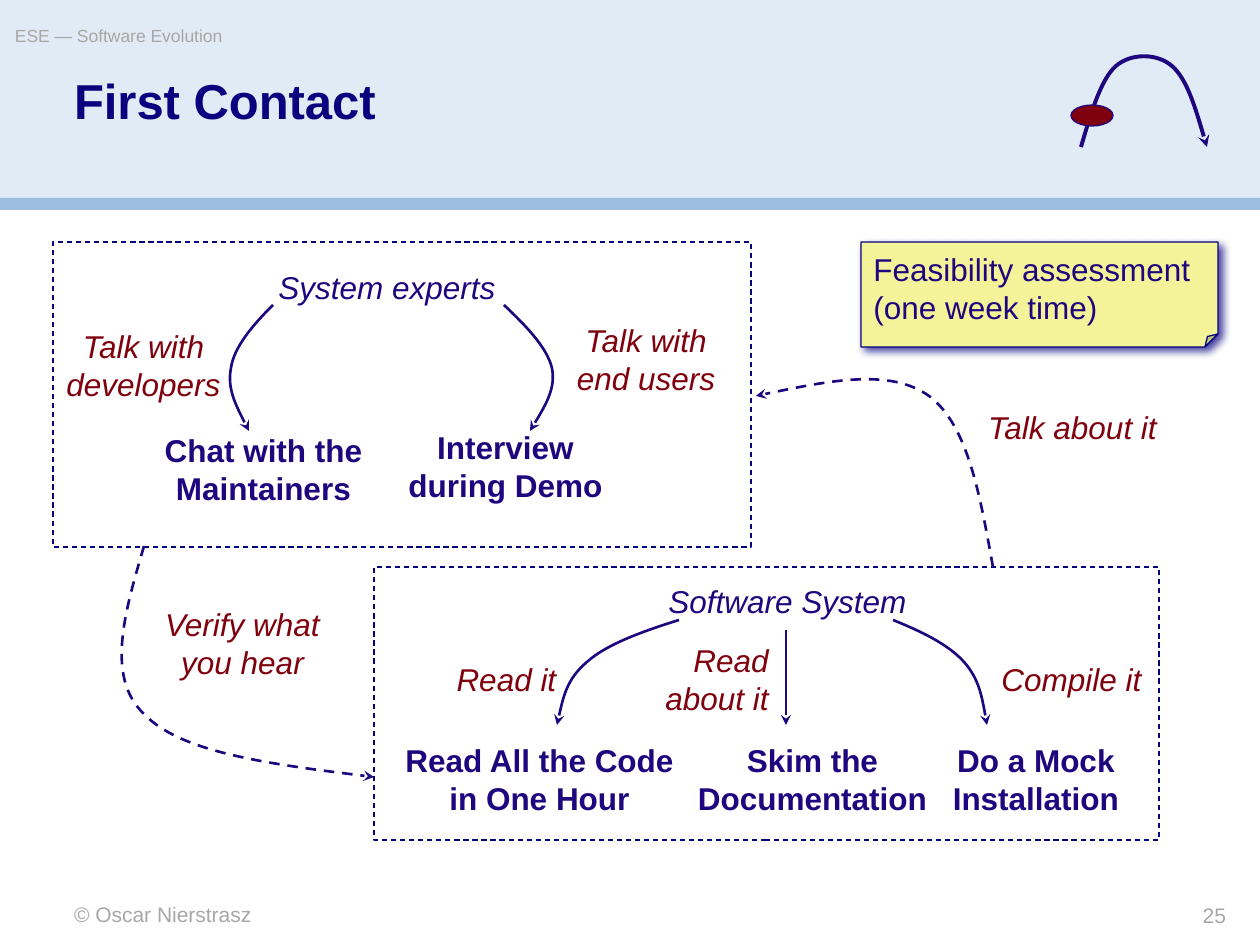
from lxml.etree import SubElement
from pptx import Presentation
from pptx.dml.color import RGBColor
from pptx.enum.dml import MSO_LINE
from pptx.enum.shapes import MSO_CONNECTOR, MSO_SHAPE
from pptx.enum.text import MSO_ANCHOR, MSO_AUTO_SIZE, PP_ALIGN
from pptx.oxml.ns import qn
from pptx.util import Pt

EMU_PER_PX = 914400 / 126
COLORS = {
    "header": "E1EBF5", "rule": "9CBDDE", "title": "0A017F", "frame": "05027D",
    "ink": "1E067F", "action": "7F010D", "note": "F5F399", "muted": "A7A7A7",
}

# text, box; a vertical tab breaks the line inside a paragraph
SOURCES = [
    ("System experts", (266, 262, 242, 50)),
    ("Software System", (656, 576, 263, 50)),
]
PATTERNS = [
    ("Chat with the\vMaintainers", (152, 425, 223, 88)),
    ("Interview\vduring Demo", (396, 422, 219, 88)),
    ("Read All the Code\nin One Hour", (392, 735, 295, 88)),
    ("Skim the\vDocumentation", (685, 735, 255, 88)),
    ("Do a Mock\vInstallation", (940, 735, 192, 88)),
]
ACTIONS = [
    ("Talk with\vdevelopers", (54, 321, 179, 88)),
    ("Talk with\nend users", (564, 315, 164, 88)),
    ("Read it", (444, 654, 125, 50)),
    ("Compile it", (989, 654, 165, 50)),
    ("Talk about it", (974, 402, 197, 50)),
    ("Verify what\vyou hear", (152, 599, 181, 88)),
]
# start point, then two control points and an end point per segment
BRANCHES = [
    [(504, 305), (525, 325), (547, 347), (552, 368), (556, 388), (543, 410), (530, 431)],
    [(273, 305), (253, 325), (234, 347), (231, 368), (227, 388), (238, 410), (249, 431)],
    [(679, 620), (644, 631), (607, 644), (587, 662), (567, 679), (562, 702), (557, 725)],
    [(893, 620), (920, 631), (948, 644), (964, 662), (979, 679), (983, 702), (987, 725)],
]
FEEDBACK = [
    [(144, 546), (125, 611), (105, 677), (144, 714), (181, 753), (277, 765), (374, 777)],
    [(993, 567), (980, 495), (968, 425), (929, 396), (890, 368), (823, 382), (756, 396)],
]
LIFECYCLE = [(1081, 147), (1091, 113), (1101, 79), (1116, 66), (1131, 53),
             (1157, 53), (1172, 66), (1187, 79), (1197, 113), (1207, 147)]


def px(value):
    return round(value * EMU_PER_PX)


def rgb(name):
    return RGBColor.from_string(COLORS[name])


def style_line(line, color, width, dashed=False, arrow=False):
    line.color.rgb = rgb(color)
    line.width = Pt(width)
    if dashed:
        line.dash_style = MSO_LINE.DASH
    if arrow:
        ln = line._get_or_add_ln()
        SubElement(ln, qn("a:tailEnd"), type="stealth")


def format_text(tf, color, size, align=PP_ALIGN.LEFT, bold=False, italic=False):
    for p in tf.paragraphs:
        p.alignment = align
        for r in p.runs:
            r.font.name = "Arial"
            r.font.size = Pt(size)
            r.font.bold = bold
            r.font.italic = italic
            r.font.color.rgb = rgb(color)


def clear_margins(tf):
    tf.margin_left = tf.margin_top = tf.margin_right = tf.margin_bottom = 0


def add_shape(slide, kind, box, fill=None, line=None, dashed=False):
    sp = slide.shapes.add_shape(kind, *map(px, box))
    sp.shadow.inherit = False
    if fill:
        sp.fill.solid()
        sp.fill.fore_color.rgb = rgb(fill)
    else:
        sp.fill.background()
    if line:
        style_line(sp.line, line, 0.75, dashed)
    else:
        sp.line.fill.background()
    return sp


def add_label(slide, text, box, color, align=PP_ALIGN.CENTER, wrap=False, **style):
    tf = slide.shapes.add_textbox(*map(px, box)).text_frame
    tf.text = text
    tf.word_wrap = wrap
    tf.auto_size = MSO_AUTO_SIZE.SHAPE_TO_FIT_TEXT
    tf.vertical_anchor = MSO_ANCHOR.MIDDLE
    format_text(tf, color, 18, align, **style)


def add_margin_text(slide, text, box, size, align=PP_ALIGN.LEFT):
    tf = slide.shapes.add_textbox(*map(px, box)).text_frame
    tf.text = text
    tf.word_wrap = True
    clear_margins(tf)
    format_text(tf, "muted", size, align)


def add_curve(slide, points, width=1.5, dashed=False):
    """Draw an arrow of cubic segments: the builder's lines are regrouped by threes."""
    start, *rest = [(px(x), px(y)) for x, y in points]
    builder = slide.shapes.build_freeform(*start)
    builder.add_line_segments(rest, close=False)
    sp = builder.convert_to_shape()
    sp.shadow.inherit = False
    sp.fill.background()
    style_line(sp.line, "ink", width, dashed, arrow=True)
    outline = sp._element.xpath(".//a:path")[0]
    lines = outline.findall(qn("a:lnTo"))
    for i in range(0, len(lines), 3):
        curve = SubElement(outline, qn("a:cubicBezTo"))
        for line in lines[i:i + 3]:
            curve.append(line[0])
            outline.remove(line)


def add_arrow(slide, x1, y1, x2, y2):
    cxn = slide.shapes.add_connector(MSO_CONNECTOR.STRAIGHT, px(x1), px(y1), px(x2), px(y2))
    style_line(cxn.line, "ink", 1.5, arrow=True)
    SubElement(cxn._element.spPr, qn("a:effectLst"))


def add_note(slide, text, box):
    sp = add_shape(slide, MSO_SHAPE.FOLDED_CORNER, box, "note", "frame")
    guides = sp._element.spPr.find(qn("a:prstGeom")).get_or_add_avLst()
    SubElement(guides, qn("a:gd"), name="adj", fmla="val 12500")
    effects = sp._element.spPr.find(qn("a:effectLst"))
    shadow = SubElement(effects, qn("a:outerShdw"), blurRad=str(Pt(5)),
                        dist=str(Pt(3)), dir="2700000", rotWithShape="0")
    color = SubElement(shadow, qn("a:srgbClr"), val=COLORS["title"])
    SubElement(color, qn("a:alpha"), val="75000")
    tf = sp.text_frame
    tf.text = text
    tf.word_wrap = True
    tf.vertical_anchor = MSO_ANCHOR.MIDDLE
    format_text(tf, "ink", 18)


def set_title(slide, text, box):
    title = slide.shapes.title
    slide.shapes._spTree.append(title._element)  # in front of the header band
    title.left, title.top, title.width, title.height = map(px, box)
    tf = title.text_frame
    tf.text = text
    tf.auto_size = MSO_AUTO_SIZE.NONE
    tf.vertical_anchor = MSO_ANCHOR.TOP
    clear_margins(tf)
    tf.paragraphs[0].line_spacing = 0.9
    format_text(tf, "title", 28, bold=True)


def main():
    prs = Presentation()
    prs.slide_width, prs.slide_height = px(1260), px(945)
    slide = prs.slides.add_slide(prs.slide_layouts[5])

    add_shape(slide, MSO_SHAPE.RECTANGLE, (0, 0, 1260, 199), "header")
    add_shape(slide, MSO_SHAPE.RECTANGLE, (0, 198, 1260, 12), "rule")
    set_title(slide, "First Contact", (74, 77, 1113, 112))
    add_margin_text(slide, "ESE — Software Evolution", (15, 25, 759, 35), 10)
    add_margin_text(slide, "© Oscar Nierstrasz", (74, 902, 525, 25), 12)
    add_margin_text(slide, "25", (1040, 903, 186, 25), 12, PP_ALIGN.RIGHT)

    for box in [(53, 242, 698, 305), (374, 567, 785, 273)]:
        add_shape(slide, MSO_SHAPE.RECTANGLE, box, line="frame", dashed=True)
    for text, box in SOURCES:
        add_label(slide, text, box, "ink", italic=True)
    for text, box in PATTERNS:
        add_label(slide, text, box, "ink", bold=True)
    for text, box in ACTIONS:
        add_label(slide, text, box, "action", italic=True)
    add_label(slide, "Read about it", (620, 635, 161, 88), "action",
              PP_ALIGN.RIGHT, wrap=True, italic=True)

    for points in BRANCHES:
        add_curve(slide, points)
    add_arrow(slide, 786, 630, 786, 725)
    for points in FEEDBACK:
        add_curve(slide, points, dashed=True)
    add_note(slide, "Feasibility assessment (one week time)", (861, 242, 357, 105))

    add_curve(slide, LIFECYCLE, width=2.25)
    add_shape(slide, MSO_SHAPE.OVAL, (1071, 105, 42, 21), "action", "ink")
    prs.save("out.pptx")


if __name__ == "__main__":
    main()
